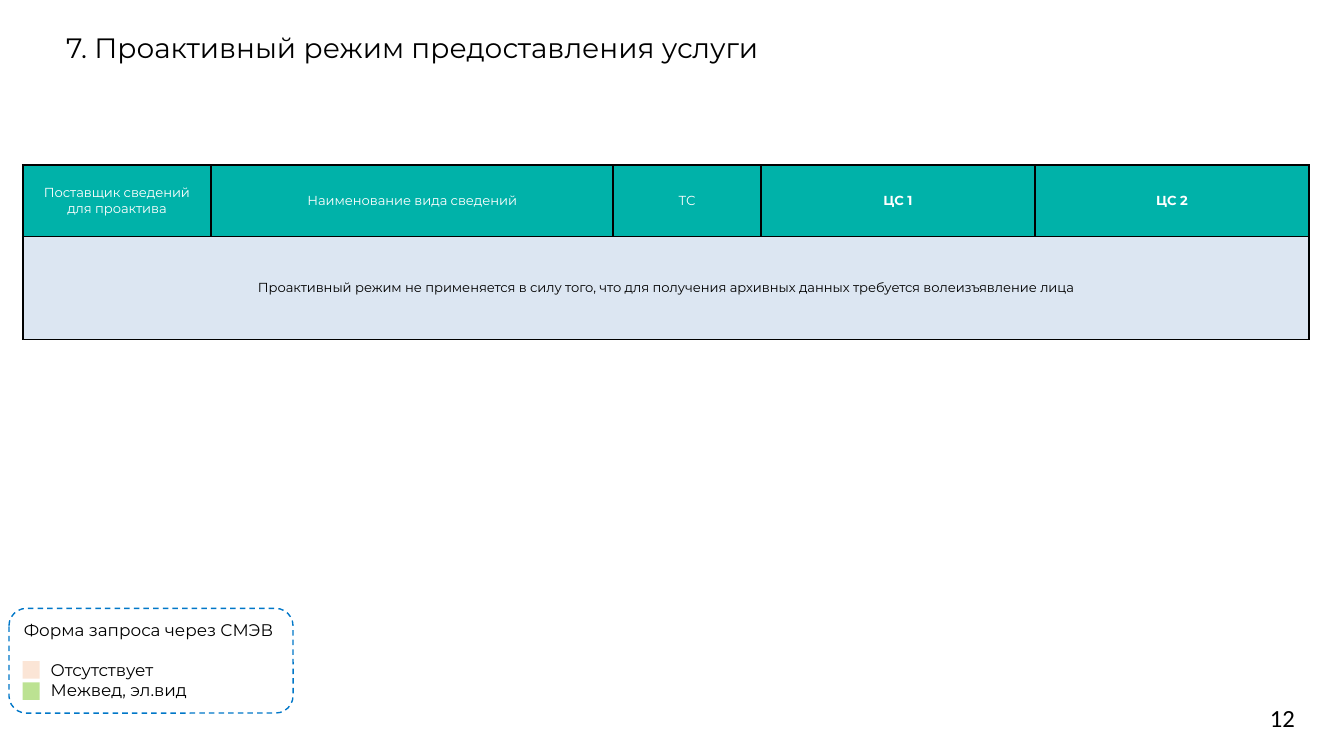
import pptx
import pptx.util
import pptx.dml.color
import pptx.enum.dml
import pptx.enum.shapes
import pptx.enum.text
import pptx.oxml
import pptx.oxml.ns

Cm = pptx.util.Cm
Pt = pptx.util.Pt
RGBColor = pptx.dml.color.RGBColor
ALIGN = pptx.enum.text.PP_ALIGN
ANCHOR = pptx.enum.text.MSO_ANCHOR
SHAPE = pptx.enum.shapes.MSO_SHAPE

BLACK = RGBColor(0x00, 0x00, 0x00)
WHITE = RGBColor(0xFF, 0xFF, 0xFF)
TEAL = RGBColor(0x00, 0xB2, 0xA9)
PALE = RGBColor(0xDC, 0xE6, 0xF2)
GREEN = RGBColor(0xBC, 0xE2, 0x92)
PEACH = RGBColor(0xFB, 0xE5, 0xD6)
BLUE = RGBColor(0x00, 0x77, 0xC8)

FLUSH = {"margin_left": 0, "margin_top": 0, "margin_right": 0,
         "margin_bottom": 0, "word_wrap": True,
         "auto_size": pptx.enum.text.MSO_AUTO_SIZE.NONE}


def format_item(item, values):
    for name, value in values.items():
        setattr(item, name, value)


def write(para, text, size, color=BLACK, font="Montserrat", bold=False,
          align=ALIGN.LEFT):
    run = para.add_run()
    run.text = text
    para.alignment = align
    format_item(run.font, {"name": font, "size": Pt(size), "bold": bold})
    run.font.color.rgb = color


deck = pptx.Presentation()
format_item(deck, {"slide_width": Cm(25.4), "slide_height": Cm(14.29)})
slide = deck.slides.add_slide(deck.slide_layouts[5])
shapes = slide.shapes

title = shapes.title
format_item(title, {"left": Cm(1.25), "top": Cm(0.58),
                    "width": Cm(17.8), "height": Cm(0.74)})
format_item(title.text_frame, {**FLUSH, "vertical_anchor": ANCHOR.TOP})
write(title.text_frame.paragraphs[0],
      "7. Проактивный режим предоставления услуги", 15)

number = shapes.add_textbox(Cm(24), Cm(13.18), Cm(1.2), Cm(0.76)).text_frame
format_item(number, {**FLUSH, "vertical_anchor": ANCHOR.MIDDLE})
write(number.paragraphs[0], "12", 13.2, font="Calibri")

heads = [("Поставщик сведений для проактива", 3.56, False),
         ("Наименование вида сведений", 7.6, False),
         ("ТС", 2.79, False),
         ("ЦС 1", 5.18, True),
         ("ЦС 2", 5.18, True)]
table = shapes.add_table(2, len(heads), Cm(0.43), Cm(3.12),
                         Cm(24.31), Cm(3.3)).table
table.rows[0].height = Cm(1.35)
table.rows[1].height = Cm(1.95)
for col, (text, width, bold) in enumerate(heads):
    table.columns[col].width = Cm(width)
    write(table.cell(0, col).text_frame.paragraphs[0], text, 7, WHITE,
          bold=bold, align=ALIGN.CENTER)
write(table.cell(1, 0).text_frame.paragraphs[0],
      "Проактивный режим не применяется в силу того, что для получения "
      "архивных данных требуется волеизъявление лица", 7, align=ALIGN.CENTER)
table.cell(1, 0).merge(table.cell(1, len(heads) - 1))

for row, color in enumerate([TEAL, PALE]):
    for cell in table.rows[row].cells:
        cell.vertical_anchor = ANCHOR.MIDDLE
        cell.fill.solid()
        cell.fill.fore_color.rgb = color
        props = cell._tc.get_or_add_tcPr()
        for spot, side in enumerate("LRTB"):
            props.insert(spot, pptx.oxml.parse_xml(
                f'<a:ln{side} {pptx.oxml.ns.nsdecls("a")} w="{Pt(1)}">'
                f'<a:solidFill><a:srgbClr val="{BLACK}"/></a:solidFill>'
                f'</a:ln{side}>'))

legend = shapes.add_textbox(Cm(0.2), Cm(11.58), Cm(5.33), Cm(1.8)).text_frame
legend.word_wrap = True
write(legend.paragraphs[0], "Форма запроса через СМЭВ", 9)
for text, gap in [("Отсутствует", 11), ("Межвед, эл.вид", 0)]:
    para = legend.add_paragraph()
    para.space_before = Pt(gap)
    para._p.get_or_add_pPr().set("marL", str(Cm(0.51)))
    write(para, text, 9)

for top, color in [(12.9, GREEN), (12.5, PEACH)]:
    swatch = shapes.add_shape(SHAPE.RECTANGLE, Cm(0.43), Cm(top),
                              Cm(0.32), Cm(0.33))
    swatch.shadow.inherit = False
    swatch.fill.solid()
    swatch.fill.fore_color.rgb = color
    swatch.line.fill.background()

frame = shapes.add_shape(SHAPE.ROUNDED_RECTANGLE, Cm(0.17), Cm(11.5),
                         Cm(5.37), Cm(1.98))
frame.shadow.inherit = False
frame.fill.background()
frame.line.color.rgb = BLUE
format_item(frame.line, {"width": Pt(0.75),
                         "dash_style": pptx.enum.dml.MSO_LINE.DASH})

deck.save("out.pptx")
